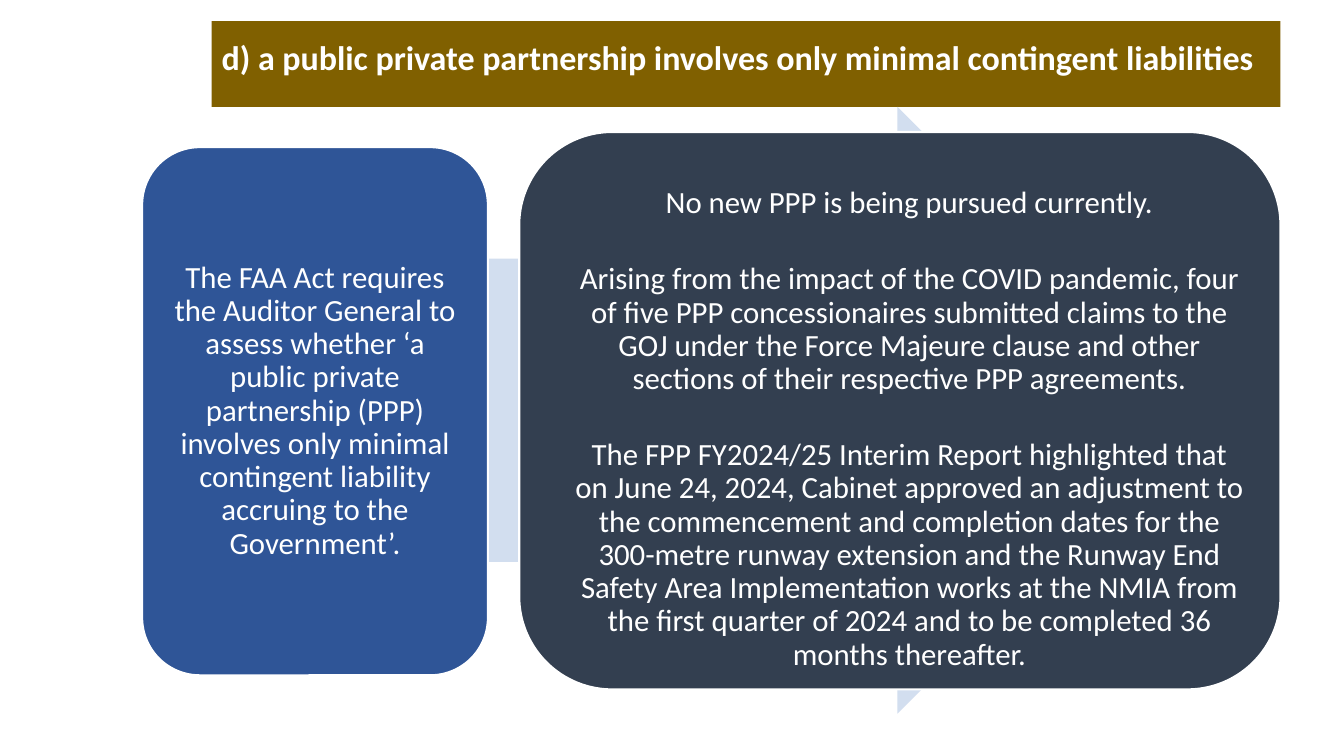
from pptx import Presentation
from pptx.dml.color import RGBColor
from pptx.enum import shapes, text
from pptx.util import Inches, Pt

WHITE = RGBColor(0xFF, 0xFF, 0xFF)
OLIVE = RGBColor(0x80, 0x60, 0x00)
PALE_BLUE = RGBColor(0xD2, 0xDE, 0xEF)
BLUE = RGBColor(0x2F, 0x55, 0x97)
SLATE = RGBColor(0x33, 0x3F, 0x50)

TITLE = "d) a public private partnership involves only minimal contingent liabilities"
REQUIREMENT = [
    "The FAA Act requires the Auditor General to assess whether ‘a public private "
    "partnership (PPP) involves only minimal contingent liability accruing to the "
    "Government’.",
]
FINDINGS = [
    "No new PPP is being pursued currently.",
    "Arising from the impact of the COVID pandemic, four of five PPP concessionaires "
    "submitted claims to the GOJ under the Force Majeure clause and other sections of "
    "their respective PPP agreements.",
    "The FPP FY2024/25 Interim Report highlighted that on June 24, 2024, Cabinet approved "
    "an adjustment to the commencement and completion dates for the 300-metre runway "
    "extension and the Runway End Safety Area Implementation works at the NMIA from the "
    "first quarter of 2024 and to be completed 36 months thereafter.",
]


def add_block(page, kind, bounds, fill, outlined=False):
    block = page.shapes.add_shape(kind, *(Inches(length) for length in bounds))
    block.shadow.inherit = False
    block.fill.solid()
    block.fill.fore_color.rgb = fill
    if outlined:
        block.line.color.rgb = WHITE
        block.line.width = Pt(1.5)
    else:
        block.line.fill.background()
    return block


def write(block, paragraphs, size, insets, align, anchor, bold=False):
    """Fill a block with white text; insets are left, top, right, bottom."""
    frame = block.text_frame
    frame.word_wrap = True
    frame.vertical_anchor = anchor
    (frame.margin_left, frame.margin_top,
     frame.margin_right, frame.margin_bottom) = (Inches(inset) for inset in insets)
    for index, content in enumerate(paragraphs):
        para = frame.paragraphs[0] if index == 0 else frame.add_paragraph()
        para.alignment = align
        para.line_spacing = 0.9
        if index:
            para.space_before = Pt(30.5)
        span = para.add_run()
        span.text = content
        span.font.name = "Calibri"
        span.font.size = Pt(size)
        span.font.bold = bold
        span.font.color.rgb = WHITE


def main():
    deck = Presentation()
    deck.slide_width, deck.slide_height = Inches(13.33), Inches(7.5)
    page = deck.slides.add_slide(deck.slide_layouts[6])
    kinds = shapes.MSO_SHAPE
    align, anchor = text.PP_ALIGN, text.MSO_ANCHOR

    title = add_block(page, kinds.RECTANGLE, (2.1, 0.21, 10.6, 0.85), OLIVE)
    write(title, [TITLE], 24.3, (0.1, 0.05, 0.1, 0.13), align.LEFT, anchor.MIDDLE, bold=True)

    add_block(page, kinds.RIGHT_ARROW, (2.32, 1.06, 9.59, 6.02), PALE_BLUE)

    requirement = add_block(page, kinds.ROUNDED_RECTANGLE, (1.41, 1.46, 3.43, 5.24), BLUE, True)
    write(requirement, REQUIREMENT, 22, (0.08,) * 4, align.CENTER, anchor.MIDDLE)

    findings = add_block(page, kinds.ROUNDED_RECTANGLE, (5.15, 1.31, 7.55, 5.53), SLATE, True)
    write(findings, FINDINGS, 22, (0.27, 0.28, 0.08, 0.08), align.CENTER, anchor.TOP)

    deck.save("out.pptx")


if __name__ == "__main__":
    main()
